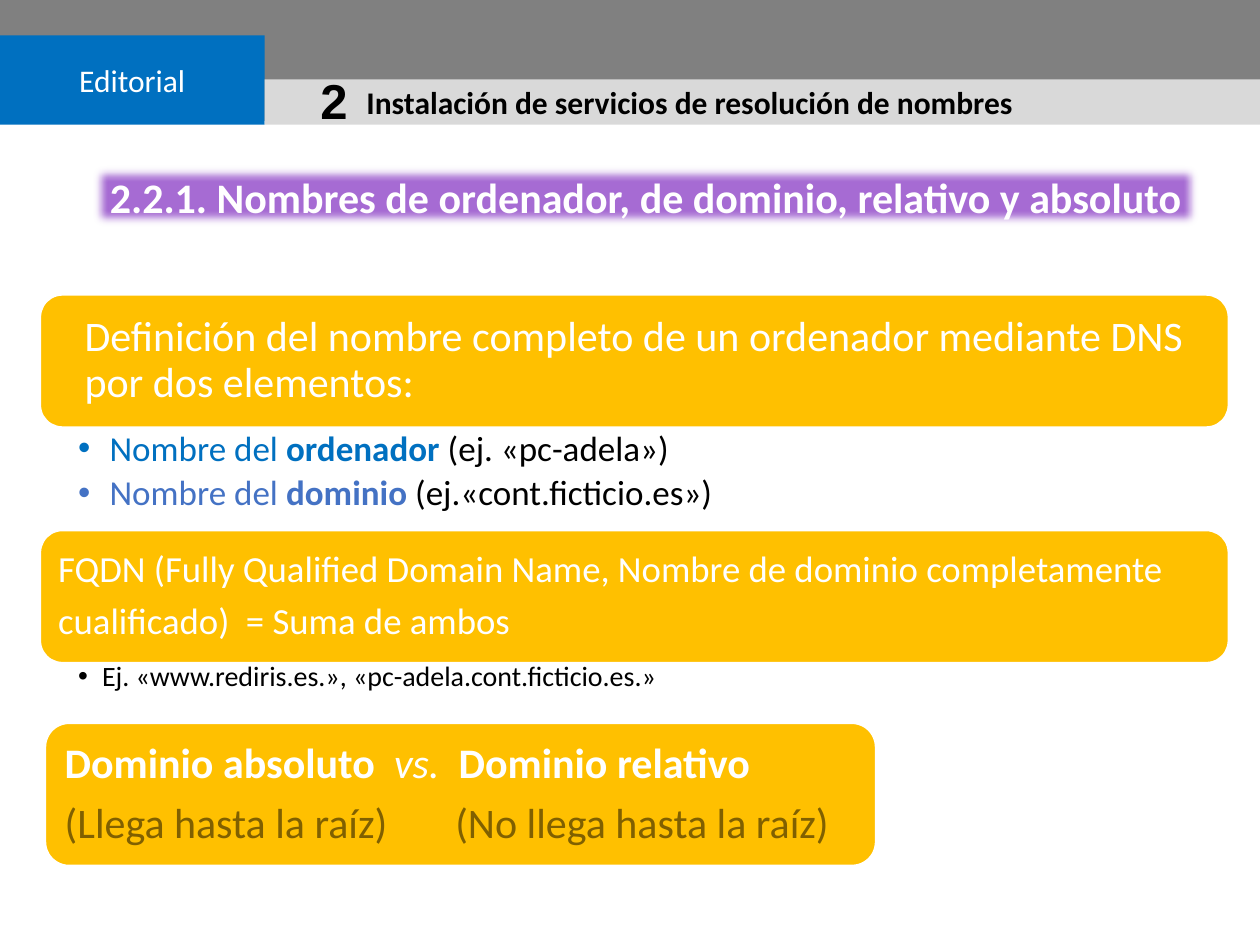
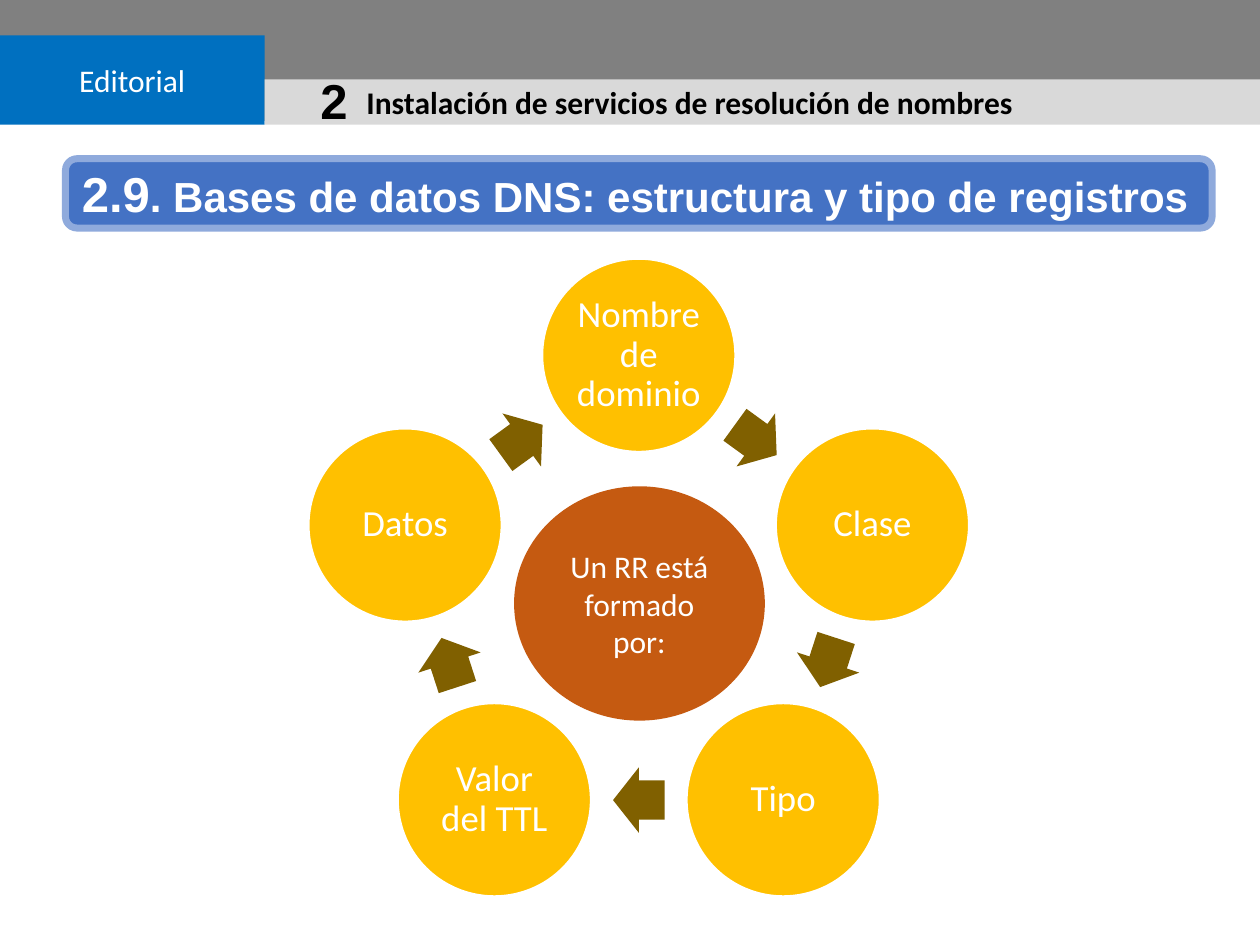
from dataclasses import dataclass
from math import cos, radians, sin

from lxml import etree
from pptx import Presentation
from pptx import util as u
from pptx.dml.color import RGBColor
from pptx.enum import shapes, text
from pptx.oxml import ns

PX = 9144  # EMU in one px, 100 px to the inch
SHAPE = shapes.MSO_SHAPE
ALIGN = text.PP_ALIGN
ANCHOR = text.MSO_ANCHOR


@dataclass(frozen=True)
class Theme:
    body_font: str = "Calibri"
    number_font: str = "Arial"
    white: str = "FFFFFF"
    black: str = "000000"
    band: str = "808080"
    strip: str = "D9D9D9"
    blue: str = "0070C0"
    indigo: str = "4472C4"
    pale_indigo: str = "8FAADC"
    purple: str = "A66BD3"
    gold: str = "FFC000"
    dark_gold: str = "806000"
    rust: str = "C55A11"
    number: int = 28
    heading: int = 24
    node: int = 21
    item: int = 20
    label: int = 18
    example: int = 16


THEME = Theme()


@dataclass(frozen=True)
class Span:
    words: str
    size: int
    color: str = THEME.white
    bold: bool = False
    italic: bool = False
    font: str = THEME.body_font


def rgb(color):
    return RGBColor.from_string(color)


def px(*lengths):
    return [u.Emu(round(length * PX)) for length in lengths]


# Text

def set_frame(box, insets=(10, 5, 10, 5), anchor=ANCHOR.MIDDLE, wrap=True):
    frame = box.text_frame
    frame.word_wrap = wrap
    frame.auto_size = text.MSO_AUTO_SIZE.NONE
    frame.vertical_anchor = anchor
    (frame.margin_left, frame.margin_top,
     frame.margin_right, frame.margin_bottom) = px(*insets)
    return frame


def add_bullet(para, hang):
    props = para._p.get_or_add_pPr()
    props.set("marL", str(hang * PX))
    props.set("indent", str(-hang * PX))
    etree.SubElement(props, ns.qn("a:buFont"), typeface="Arial")
    etree.SubElement(props, ns.qn("a:buChar"), char="•")


def add_tab(para, position):
    tabs = etree.SubElement(para._p.get_or_add_pPr(), ns.qn("a:tabLst"))
    etree.SubElement(tabs, ns.qn("a:tab"), pos=str(position * PX), algn="l")


def write(frame, *lines, align=ALIGN.LEFT, leading=None, gap=0, hang=0, tab=0):
    """Write one paragraph per list of spans; gap is a share of the type size."""
    for index, spans in enumerate(lines):
        para = frame.add_paragraph() if index else frame.paragraphs[0]
        if hang:
            add_bullet(para, hang)
        if tab:
            add_tab(para, tab)
        para.alignment = align
        if leading:
            para.line_spacing = leading
        para.space_after = u.Pt(gap * spans[0].size)
        for span in spans:
            run = para.add_run()
            run.text = span.words
            run.font.name = span.font
            run.font.size = u.Pt(span.size)
            run.font.bold = span.bold
            run.font.italic = span.italic
            run.font.color.rgb = rgb(span.color)


# Elements

def add_block(page, kind, place, fill, line=None, width=1):
    block = page.shapes.add_shape(kind, *px(*place))
    block.shadow.inherit = False
    block.fill.solid()
    block.fill.fore_color.rgb = rgb(fill)
    if line:
        block.line.color.rgb = rgb(line)
        block.line.width = u.Pt(width)
    else:
        block.line.fill.background()
    return block


def add_header(page):
    add_block(page, SHAPE.RECTANGLE, (0, 0, 1000, 96), THEME.band)
    badge = add_block(page, SHAPE.RECTANGLE, (0, 28, 210, 71), THEME.blue)
    write(set_frame(badge), [Span("Editorial", THEME.label)], align=ALIGN.CENTER)
    add_block(page, SHAPE.RECTANGLE, (210, 63, 790, 36), THEME.strip)
    chapter = add_block(page, SHAPE.RECTANGLE, (214, 64, 102, 31), THEME.strip)
    write(set_frame(chapter),
          [Span("2", THEME.number, THEME.black, True, font=THEME.number_font)],
          align=ALIGN.CENTER)
    subject = page.shapes.add_textbox(*px(281, 61, 661, 40))
    write(set_frame(subject, anchor=ANCHOR.TOP),
          [Span("Instalación de servicios de resolución de nombres",
                THEME.label, THEME.black, True)])


def set_title(page, place, spans, align):
    title = page.shapes.title
    title.left, title.top, title.width, title.height = px(*place)
    write(set_frame(title, wrap=False), spans, align=align)
    page.shapes.element.append(title.element)  # in front of its plate


def soften_edges(block, radius):
    effects = block.element.spPr.find(ns.qn("a:effectLst"))
    etree.SubElement(effects, ns.qn("a:softEdge"), rad=str(radius * PX))


def add_card(page, place, *lines, left=10, tab=0):
    card = add_block(page, SHAPE.ROUNDED_RECTANGLE, place, THEME.gold, THEME.white)
    write(set_frame(card, (left, 10, 10, 10)), *lines,
          leading=0.9, gap=0.35, tab=tab)


def add_bullets(page, place, *lines, hang):
    box = page.shapes.add_textbox(*px(*place))
    write(set_frame(box, (30, 3, 16, 3), ANCHOR.TOP), *lines,
          leading=0.9, gap=0.2, hang=hang)


def add_cycle(page, labels, center, radius, node, arrow_radius, arrow):
    """Place nodes clockwise from the top, with an arrow after each one."""
    step = 360 / len(labels)

    def around(degrees, distance, width, height):
        angle = radians(degrees)
        return (center[0] + distance * sin(angle) - width / 2,
                center[1] - distance * cos(angle) - height / 2, width, height)

    for index, label in enumerate(labels):
        turn = index * step
        disc = add_block(page, SHAPE.OVAL, around(turn, radius, node, node),
                         THEME.gold, THEME.white)
        write(set_frame(disc, (3, 3, 3, 3)), [Span(label, THEME.node)],
              align=ALIGN.CENTER, leading=0.9, gap=0.35)
        turn += step / 2
        pointer = add_block(page, SHAPE.RIGHT_ARROW,
                            around(turn, arrow_radius, *arrow), THEME.dark_gold)
        pointer.adjustments[0] = 0.6
        pointer.rotation = turn


# Slides

def build_names(page):
    add_header(page)
    place = (73, 131, 879, 50)
    plate = add_block(page, SHAPE.RECTANGLE, place, THEME.purple)
    soften_edges(plate, 7)
    set_title(page, place,
              [Span("2.2.1. Nombres de ordenador, de dominio, relativo y absoluto",
                    THEME.heading, bold=True)], ALIGN.CENTER)

    add_card(page, (32, 234, 943, 105),
             [Span("Definición del nombre completo de un ordenador mediante DNS "
                   "por dos elementos:", THEME.heading)], left=30)
    parts = [("ordenador ", "(ej. «pc-adela»)", THEME.blue),
             ("dominio ", "(ej.«cont.ficticio.es»)", THEME.indigo)]
    add_bullets(page, (32, 339, 943, 74),
                *[[Span("Nombre del ", THEME.item, color),
                   Span(part, THEME.item, color, True),
                   Span(example, THEME.item, THEME.black)]
                  for part, example, color in parts], hang=25)

    add_card(page, (32, 421, 943, 105),
             [Span("FQDN (Fully Qualified Domain Name, Nombre de dominio "
                   "completamente", THEME.node)],
             [Span("cualificado)  = Suma de ambos", THEME.node)], left=9)
    add_bullets(page, (32, 523, 943, 38),
                [Span("Ej. «www.rediris.es.», «pc-adela.cont.ficticio.es.»",
                      THEME.example, THEME.black)], hang=19)

    add_card(page, (36, 574, 659, 113),
             [Span("Dominio absoluto  ", THEME.heading, bold=True),
              Span("vs.  ", THEME.heading, italic=True),
              Span("Dominio relativo", THEME.heading, bold=True)],
             [Span("(Llega hasta la raíz)\t(No llega hasta la raíz)",
                   THEME.heading, THEME.dark_gold)], tab=310)


def build_records(page):
    add_header(page)
    add_block(page, SHAPE.ROUNDED_RECTANGLE, (52, 126, 910, 55),
              THEME.indigo, THEME.pale_indigo, 4)
    set_title(page, (55, 126, 904, 55),
              [Span("2.9", THEME.number, bold=True, font=THEME.number_font),
               Span(". Bases de datos DNS: estructura y tipo de registros",
                    THEME.heading, bold=True, font=THEME.number_font)], ALIGN.LEFT)

    add_cycle(page, ["Nombre de dominio", "Clase", "Tipo", "Valor del TTL", "Datos"],
              center=(507, 477), radius=195, node=153,
              arrow_radius=158, arrow=(41, 52))
    core = add_block(page, SHAPE.OVAL, (408, 386, 199, 186), THEME.rust)
    write(set_frame(core), [Span("Un RR está formado por:", THEME.label)],
          align=ALIGN.CENTER)


def main():
    deck = Presentation()
    deck.slide_width, deck.slide_height = px(1000, 750)
    title_only = deck.slide_layouts[5]
    for build in (build_names, build_records):
        build(deck.slides.add_slide(title_only))
    deck.save("out.pptx")


if __name__ == "__main__":
    main()
